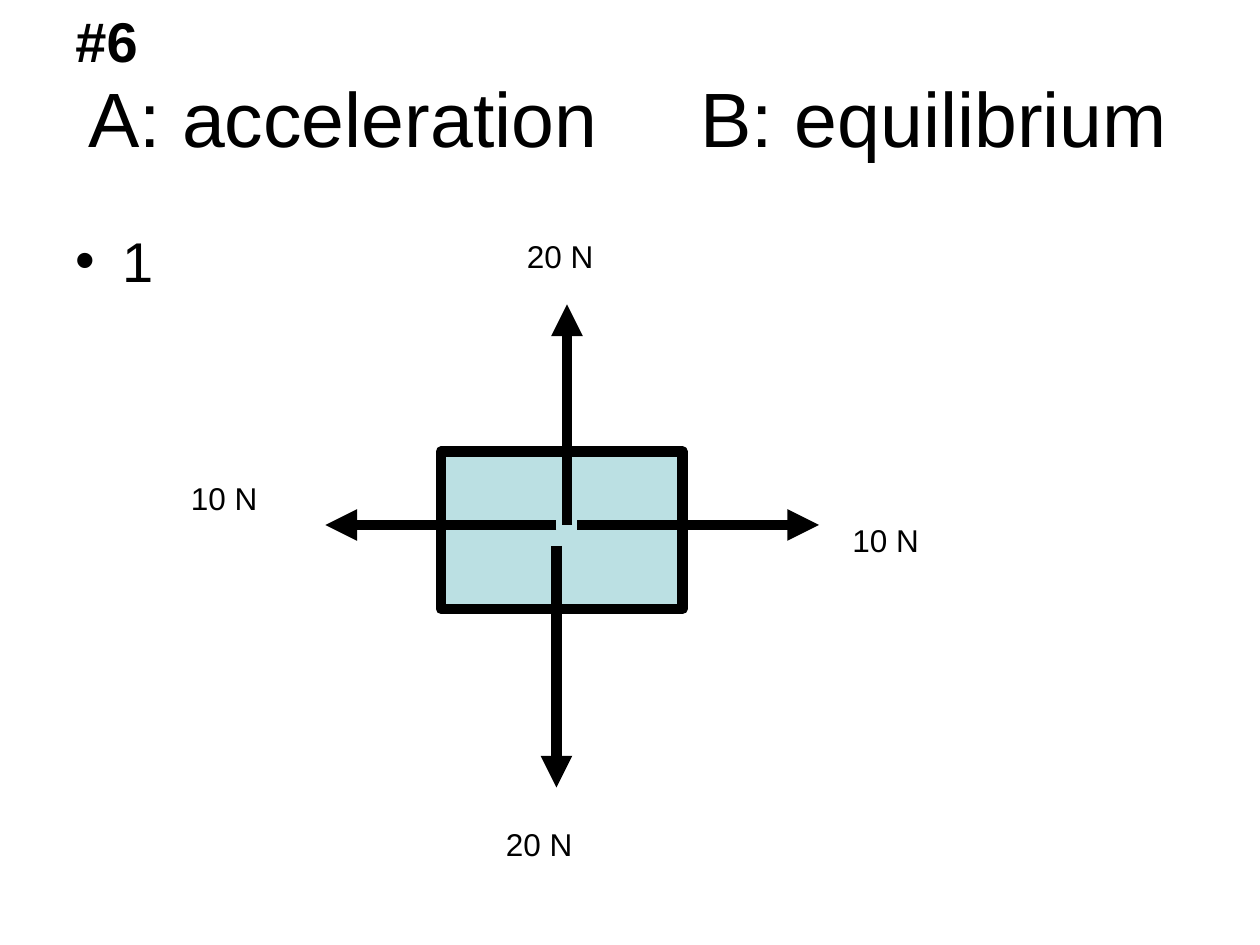
from lxml import etree
from pptx import Presentation
from pptx import util as u
from pptx.dml.color import RGBColor
from pptx.enum import shapes, text
from pptx.oxml.ns import qn

BLACK = "000000"
PALE_BLUE = "BBE0E3"
FONT = "Arial"
STROKE = 6

FORCE_ARROWS = [
    ((318, 312), (318, 450)),
    ((324, 300), (324, 174)),
    ((330, 300), (468, 300)),
    ((318, 300), (186, 300)),
]
FORCE_LABELS = [
    ("20 N", 294, 132, 90),
    ("20 N", 282, 468, 78),
    ("10 N", 102, 270, 78),
    ("10 N", 480, 294, 72),
]


def color(hex_code):
    return RGBColor.from_string(hex_code)


def place(shape, left, top, width, height):
    shape.left, shape.top = u.Pt(left), u.Pt(top)
    shape.width, shape.height = u.Pt(width), u.Pt(height)


def format_text(frame, size, bold=False):
    for para in frame.paragraphs:
        for span in para.runs:
            span.font.name = FONT
            span.font.size = u.Pt(size)
            span.font.bold = bold
            span.font.color.rgb = color(BLACK)


def style_line(line):
    line.color.rgb = color(BLACK)
    line.width = u.Pt(STROKE)


def fill_title(title):
    """Set the two answer choices, the second one at a tab stop."""
    place(title, 36, 21.6, 648, 90)
    frame = title.text_frame
    frame.margin_left = u.Pt(14.4)
    frame.vertical_anchor = text.MSO_ANCHOR.MIDDLE
    frame.text = "A: acceleration\tB: equilibrium"
    para = frame.paragraphs[0]
    para.alignment = text.PP_ALIGN.LEFT
    tabs = etree.SubElement(para._p.get_or_add_pPr(), qn("a:tabLst"))
    etree.SubElement(tabs, qn("a:tab"), pos=str(u.Pt(350)), algn="l")
    format_text(frame, 44)


def fill_body(body):
    place(body, 36, 126, 648, 356.4)
    frame = body.text_frame
    frame.text = "1"
    properties = frame.paragraphs[0]._p.get_or_add_pPr()
    properties.set("marL", str(u.Pt(27)))
    properties.set("indent", str(u.Pt(-27)))
    format_text(frame, 32)


def add_block(page, left, top, width, height):
    block = page.shapes.add_shape(
        shapes.MSO_SHAPE.RECTANGLE,
        u.Pt(left), u.Pt(top), u.Pt(width), u.Pt(height))
    block.shadow.inherit = False
    block.fill.solid()
    block.fill.fore_color.rgb = color(PALE_BLUE)
    style_line(block.line)


def add_arrow(page, start, end):
    arrow = page.shapes.add_connector(
        shapes.MSO_CONNECTOR.STRAIGHT, *(u.Pt(value) for value in start + end))
    style_line(arrow.line)
    etree.SubElement(arrow.line._get_or_add_ln(), qn("a:tailEnd"), type="triangle")
    etree.SubElement(arrow._element.spPr, qn("a:effectLst"))


def add_label(page, wording, left, top, width, height=28.8, size=18, bold=False):
    box = page.shapes.add_textbox(
        u.Pt(left), u.Pt(top), u.Pt(width), u.Pt(height))
    frame = box.text_frame
    frame.word_wrap = True
    frame.auto_size = text.MSO_AUTO_SIZE.SHAPE_TO_FIT_TEXT
    frame.text = wording
    format_text(frame, size, bold)


def main():
    deck = Presentation()
    deck.slide_width, deck.slide_height = u.Pt(720), u.Pt(540)
    page = deck.slides.add_slide(deck.slide_layouts[1])
    fill_title(page.shapes.title)
    fill_body(page.placeholders[1])
    add_block(page, 252, 258, 138, 90)
    for start, end in FORCE_ARROWS:
        add_arrow(page, start, end)
    for wording, left, top, width in FORCE_LABELS:
        add_label(page, wording, left, top, width)
    add_label(page, "#6", 36, 0, 84, height=45.6, size=32, bold=True)
    deck.save("out.pptx")


if __name__ == "__main__":
    main()
